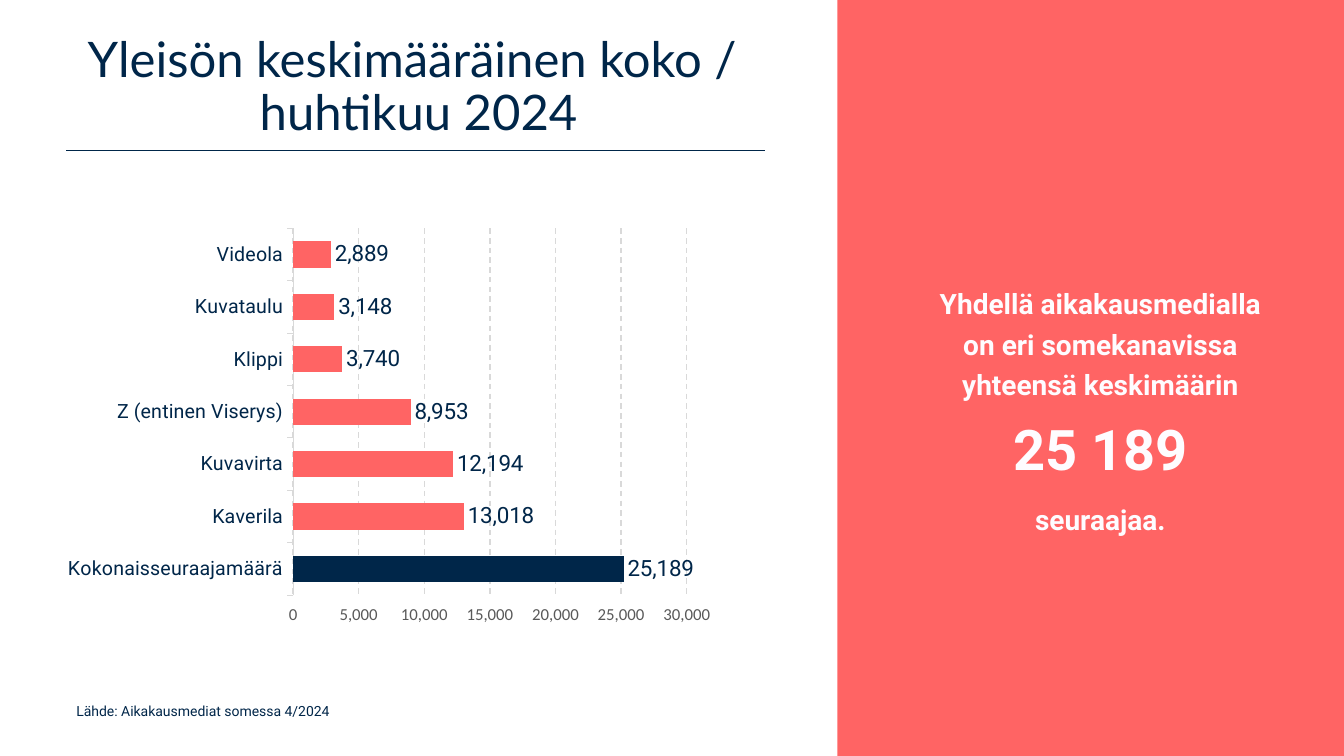
from lxml.etree import SubElement
from pptx import Presentation
from pptx.chart.data import CategoryChartData
from pptx.dml.color import RGBColor
from pptx.enum.chart import XL_CHART_TYPE, XL_LABEL_POSITION, XL_TICK_MARK
from pptx.enum.dml import MSO_LINE
from pptx.enum.shapes import MSO_CONNECTOR, MSO_SHAPE
from pptx.enum.text import MSO_ANCHOR, PP_ALIGN
from pptx.oxml.ns import qn
from pptx.util import Inches, Pt

COLORS = {
    "navy": "002649",
    "coral": "FF6464",
    "white": "FEFCFF",
    "grid": "D9D9D9",
    "gray": "595959",
}
COLUMNS, ROWS = 160, 90
PANEL_LEFT = 99.7  # column where the coral panel begins

FOLLOWERS = {
    "Kokonaisseuraajamäärä": 25189,
    "Kaverila": 13018,
    "Kuvavirta": 12194,
    "Z (entinen Viserys)": 8953,
    "Klippi": 3740,
    "Kuvataulu": 3148,
    "Videola": 2889,
}


def color(name):
    return RGBColor.from_string(COLORS[name])


def format_font(font, name="Roboto", size=14, fill="navy", bold=False):
    font.name = name
    font.size = Pt(size)
    font.bold = bold
    font.color.rgb = color(fill)


def add_text(paragraph, text, **style):
    """Add text to a paragraph; a newline becomes a line break."""
    for index, line in enumerate(text.split("\n")):
        if index:
            paragraph.add_line_break()
        if line:
            run = paragraph.add_run()
            run.text = line
            format_font(run.font, **style)


class SlideBuilder:
    """Draws elements on one slide, measured in grid columns and rows."""

    def __init__(self, presentation):
        self.width = presentation.slide_width
        self.height = presentation.slide_height
        self.slide = presentation.slides.add_slide(presentation.slide_layouts[6])
        self.shapes = self.slide.shapes

    def place(self, column, row, columns, rows):
        return (
            int(self.width * column / COLUMNS),
            int(self.height * row / ROWS),
            int(self.width * columns / COLUMNS),
            int(self.height * rows / ROWS),
        )

    def panel(self, *area, fill):
        shape = self.shapes.add_shape(MSO_SHAPE.RECTANGLE, *self.place(*area))
        shape.shadow.inherit = False
        shape.fill.solid()
        shape.fill.fore_color.rgb = color(fill)
        shape.line.fill.background()

    def rule(self, start, end, row, line="navy"):
        connector = self.shapes.add_connector(
            MSO_CONNECTOR.STRAIGHT, *self.place(start, row, end, row))
        connector.line.color.rgb = color(line)
        connector.line.width = Pt(1)
        SubElement(connector._element.spPr, qn("a:effectLst"))

    def text(self, *area, paragraphs, align=PP_ALIGN.LEFT,
             anchor=MSO_ANCHOR.TOP, line_spacing=1.0, gap=0):
        """Each paragraph is a list of (text, style) pairs."""
        frame = self.shapes.add_textbox(*self.place(*area)).text_frame
        frame.word_wrap = True
        frame.vertical_anchor = anchor
        for index, parts in enumerate(paragraphs):
            paragraph = frame.add_paragraph() if index else frame.paragraphs[0]
            paragraph.alignment = align
            paragraph.line_spacing = line_spacing
            if index:
                paragraph.space_before = Pt(gap)
            for text, style in parts:
                add_text(paragraph, text, **style)

    def bar_chart(self, *area, values, plot, highlight):
        data = CategoryChartData(number_format="#,##0")
        data.categories = list(values)
        data.add_series("Series 1", list(values.values()))
        chart = self.shapes.add_chart(
            XL_CHART_TYPE.BAR_CLUSTERED, *self.place(*area), data).chart
        chart.has_legend = False
        chart.has_title = False
        format_font(chart.font, name="Calibri", size=10, fill="gray")
        self.style_bars(chart.plots[0], highlight)
        self.style_axes(chart)
        self.fix_plot_area(chart, plot)

    def style_bars(self, bars, highlight):
        bars.gap_width = 100
        bars.vary_by_categories = False
        series = bars.series[0]
        series.invert_if_negative = False
        for target, fill in ((series, "coral"), (series.points[highlight], "navy")):
            target.format.fill.solid()
            target.format.fill.fore_color.rgb = color(fill)
        labels = series.data_labels
        labels.show_value = True
        labels.position = XL_LABEL_POSITION.OUTSIDE_END
        labels.number_format = "#,##0"
        labels.number_format_is_linked = False
        format_font(labels.font, size=16)

    def style_axes(self, chart):
        names, scale = chart.category_axis, chart.value_axis
        names.major_tick_mark = XL_TICK_MARK.OUTSIDE
        names.format.line.color.rgb = color("grid")
        names.format.line.width = Pt(0.75)
        format_font(names.tick_labels.font, size=14)
        scale.minimum_scale, scale.maximum_scale = 0, 30000
        scale.major_unit = 5000
        scale.major_tick_mark = XL_TICK_MARK.OUTSIDE
        scale.format.line.fill.background()
        scale.tick_labels.number_format = "#,##0"
        scale.tick_labels.number_format_is_linked = False
        format_font(scale.tick_labels.font, name="Calibri", size=12, fill="gray")
        grid = scale.major_gridlines.format.line
        grid.color.rgb = color("grid")
        grid.width = Pt(1)
        grid.dash_style = MSO_LINE.DASH

    def fix_plot_area(self, chart, plot):
        plot_area = chart._chartSpace.chart.plotArea
        layout = plot_area.find(qn("c:layout"))
        if layout is None:
            layout = SubElement(plot_area, qn("c:layout"))
            plot_area.insert(0, layout)
        manual = SubElement(layout, qn("c:manualLayout"))
        settings = [("layoutTarget", "inner"), ("xMode", "edge"), ("yMode", "edge")]
        settings += zip("xywh", plot)
        for tag, value in settings:
            SubElement(manual, qn(f"c:{tag}")).set("val", str(value))


def main():
    presentation = Presentation()
    presentation.slide_width = Inches(13.33)
    presentation.slide_height = Inches(7.5)
    builder = SlideBuilder(presentation)

    # Coral panel and title rule
    builder.panel(PANEL_LEFT, 0, COLUMNS - PANEL_LEFT, ROWS, fill="coral")
    builder.rule(7.9, 91.1, 17.9)

    # Source line
    builder.text(7.9, 83, 79, 5.3, paragraphs=[
        [("Lähde: Aikakausmediat somessa 4/2024", {"size": 10})]])

    # Title
    builder.text(
        0, 3, PANEL_LEFT, 15, align=PP_ALIGN.CENTER, anchor=MSO_ANCHOR.MIDDLE,
        line_spacing=0.9, paragraphs=[
            [("Yleisön keskimääräinen koko / \nhuhtikuu 2024",
              {"name": "Lato", "size": 35})]])

    # Key figure
    statement = {"size": 20, "fill": "white", "bold": True}
    builder.text(
        108.5, 18, 45, 61.2, align=PP_ALIGN.CENTER, anchor=MSO_ANCHOR.MIDDLE,
        line_spacing=1.2, gap=10, paragraphs=[
            [("Yhdellä aikakausmedialla on eri somekanavissa "
              "yhteensä keskimäärin\n", statement),
             ("25 189", {**statement, "size": 40})],
            [("seuraajaa.", statement)]])

    # Average audience by channel
    builder.bar_chart(0, 22.5, PANEL_LEFT, 52, values=FOLLOWERS,
                      plot=(0.35, 0.09, 0.47, 0.84), highlight=0)

    presentation.save("out.pptx")


if __name__ == "__main__":
    main()
